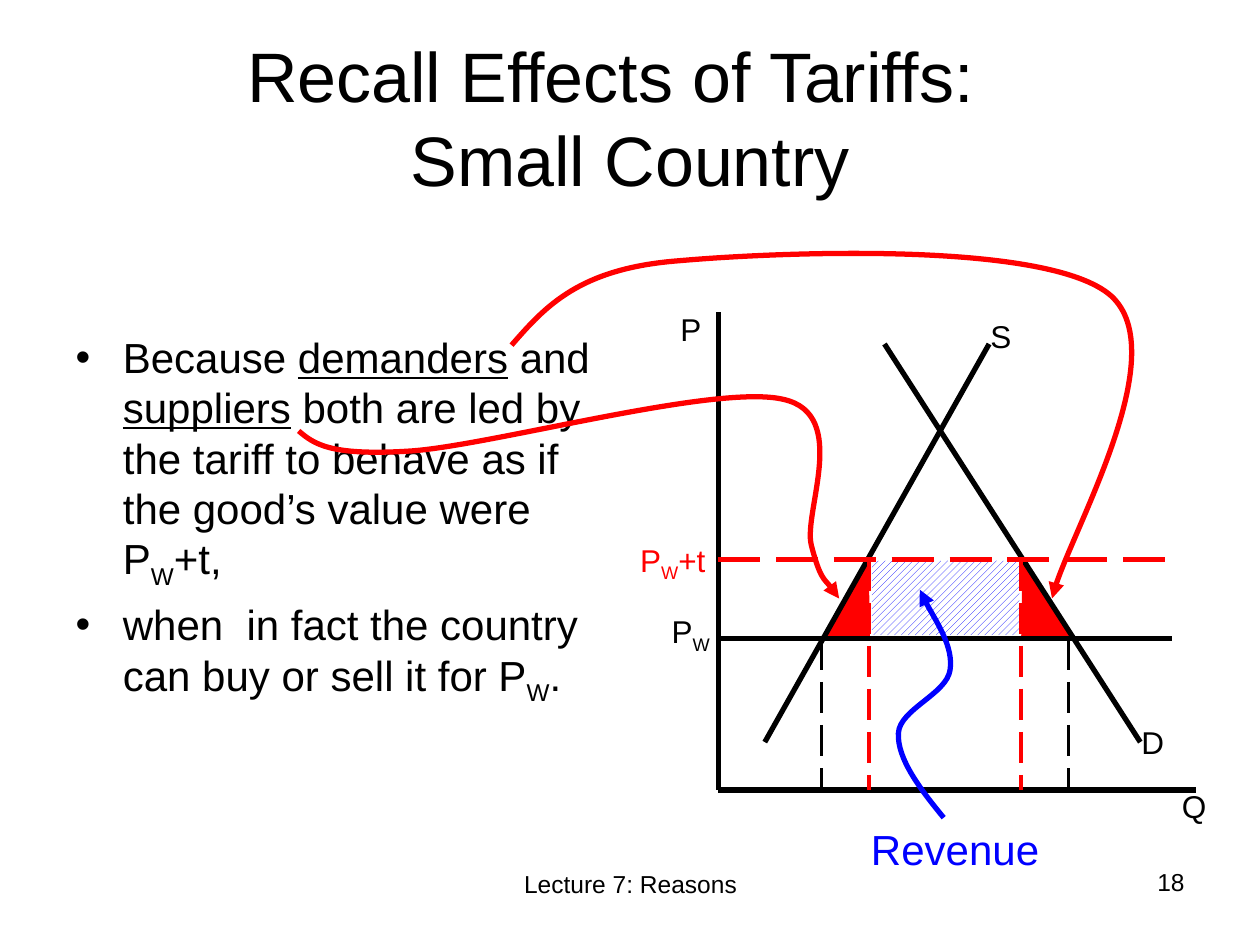
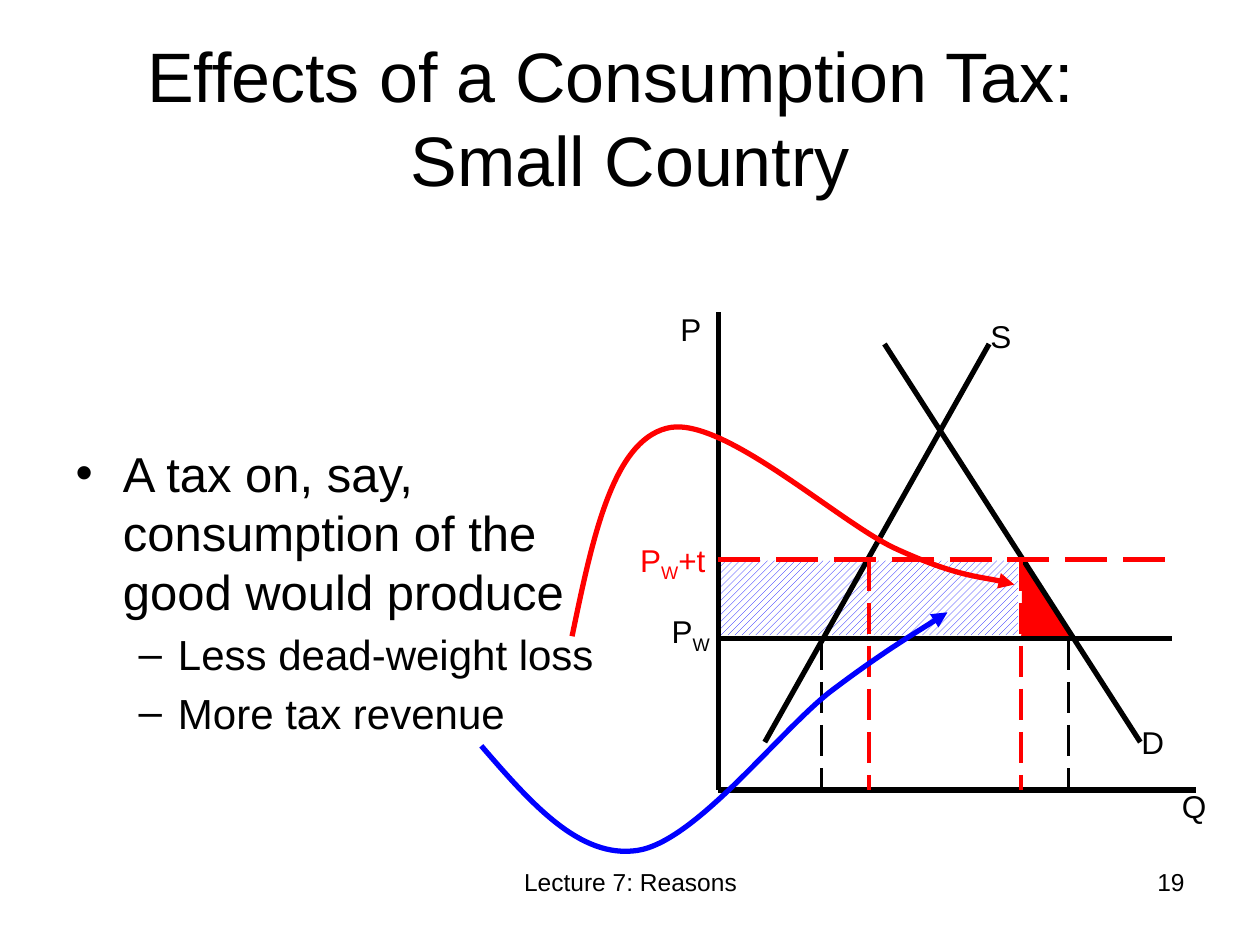
"""Build two slides on the effects of a tariff and a consumption tax."""
from lxml import etree
from pptx import Presentation
from pptx import util as u
from pptx.dml.color import RGBColor
from pptx.enum import dml, shapes, text
from pptx.oxml.ns import qn

BLACK = RGBColor(0, 0, 0)
WHITE = RGBColor(255, 255, 255)
RED = RGBColor(255, 0, 0)
BLUE = RGBColor(0, 0, 255)
FONT = "Arial"
LEFT, CENTER, RIGHT = (text.PP_ALIGN.LEFT, text.PP_ALIGN.CENTER, text.PP_ALIGN.RIGHT)
UNDERLINE = {"underline": True}
SUBSCRIPT = {"baseline": -25000}
WORLD_PRICE = [("P", {}), ("W", SUBSCRIPT)]
TARIFF_PRICE = WORLD_PRICE + [("+t", {})]

AXIS_X, AXIS_TOP, AXIS_Y, AXIS_RIGHT = 5.7, 2.48, 6.27, 9.49
WORLD_Y, TARIFF_Y, PRICE_RIGHT = 5.07, 4.44, 9.3
FREE_TRADE_X = (6.52, 8.48)
TARIFF_X = (6.9, 8.1)
SUPPLY_LOSS = [(6.89, 4.45), (6.9, 5.08), (6.53, 5.07)]
DEMAND_LOSS = [(8.12, 4.44), (8.11, 5.07), (8.52, 5.06)]


def place(shape, left, top, width, height):
    box = {"left": left, "top": top, "width": width, "height": height}
    for name, value in box.items():
        setattr(shape, name, u.Inches(value))


class Page:
    """Hold the shared style and draw elements on the current slide."""

    def __init__(self, deck):
        self.slide = deck.slides.add_slide(deck.slide_layouts[1])
        self.shapes = self.slide.shapes

    def add_spans(self, para, spans, size, color=BLACK):
        for words, extra in spans:
            span = para.add_run()
            span.text = words
            span.font.color.rgb = color
            style = {"name": FONT, "size": u.Pt(size), **extra}
            baseline = style.pop("baseline", None)
            for name, value in style.items():
                setattr(span.font, name, value)
            if baseline:
                span._r.get_or_add_rPr().set("baseline", str(baseline))

    def title(self, *lines):
        box = self.shapes.title
        place(box, 0.5, 0.3, 9, 1.25)
        para = box.text_frame.paragraphs[0]
        for number, line in enumerate(lines):
            if number:
                para.add_line_break()
                etree.SubElement(para._p[-1], qn("a:rPr"), sz="4000")
            self.add_spans(para, [(line, {})], 40)
        box.text_frame.auto_size = text.MSO_AUTO_SIZE.NONE

    def body(self, top, height, items):
        box = self.slide.placeholders[1]
        place(box, 0.5, top, 4.42, height)
        frame = box.text_frame
        frame.auto_size = text.MSO_AUTO_SIZE.NONE
        for number, (level, size, spans) in enumerate(items):
            para = frame.add_paragraph() if number else frame.paragraphs[0]
            para.level = level
            self.add_spans(para, spans, size)

    def text(self, left, top, width, height, spans, size, color=BLACK, align=LEFT, inset=(0.1, 0.05)):
        box = self.shapes.add_textbox(*map(u.Inches, (left, top, width, height)))
        frame = box.text_frame
        across, down = map(u.Inches, inset)
        layout = {"word_wrap": True, "margin_left": across, "margin_right": across,
                  "margin_top": down, "margin_bottom": down}
        for name, value in layout.items():
            setattr(frame, name, value)
        frame.paragraphs[0].alignment = align
        self.add_spans(frame.paragraphs[0], spans, size, color)

    def label(self, left, top, width, spans, color=BLACK):
        self.text(left, top, width, 0.36, spans, 18, color, inset=(0.08, 0.04))

    def footer(self, number, top=6.83):
        self.text(3.42, top, 3.17, 0.52, [("Lecture 7: Reasons", {})], 14, align=CENTER)
        self.text(7.17, 6.83, 2.33, 0.52, [(number, {})], 14, align=RIGHT)

    def line(self, start, end, color=BLACK, width=3.0, dashed=False):
        line = self.shapes.add_connector(
            shapes.MSO_CONNECTOR.STRAIGHT, *map(u.Inches, (*start, *end)))
        line.line.color.rgb = color
        line.line.width = u.Pt(width)
        if dashed:
            line.line.dash_style = dml.MSO_LINE.LONG_DASH
        etree.SubElement(line._element.spPr, qn("a:effectLst"))

    def outline(self, points, color, width, close):
        start, *rest = [tuple(map(u.Inches, point)) for point in points]
        builder = self.shapes.build_freeform(*start)
        builder.add_line_segments(rest, close=close)
        shape = builder.convert_to_shape()
        shape.shadow.inherit = False
        shape.line.color.rgb = color
        shape.line.width = u.Pt(width)
        return shape

    def area(self, points):
        shape = self.outline(points, RED, 0.75, True)
        shape.fill.solid()
        shape.fill.fore_color.rgb = RED

    def curve(self, points, color):
        """Draw an arrow through Bezier points: a start, then threes of two handles and an end."""
        shape = self.outline(points, color, 3, False)
        shape.fill.background()
        properties = shape._element.spPr
        steps = list(properties.iter(qn("a:lnTo")))
        for first in range(0, len(steps), 3):
            bend = etree.Element(qn("a:cubicBezTo"))
            steps[first].addprevious(bend)
            for step in steps[first:first + 3]:
                bend.append(step[0])
                step.getparent().remove(step)
        etree.SubElement(properties.find(qn("a:ln")), qn("a:tailEnd"), type="triangle")

    def revenue_area(self, left, width):
        shape = self.shapes.add_shape(
            shapes.MSO_SHAPE.RECTANGLE, *map(u.Inches, (left, 4.45, width, 0.59)))
        shape.shadow.inherit = False
        shape.fill.patterned()
        shape.fill.pattern = dml.MSO_PATTERN.WIDE_UPWARD_DIAGONAL
        shape.fill.fore_color.rgb = BLUE
        shape.fill.back_color.rgb = WHITE
        shape.line.fill.background()

    def market(self, losses):
        for loss in losses:
            self.area(loss)
        corner = (AXIS_X, AXIS_Y)
        for start, end in (
            ((AXIS_X, AXIS_TOP), corner),
            (corner, (AXIS_RIGHT, AXIS_Y)),
            ((7.85, 2.73), (6.07, 5.89)),
            ((7.02, 2.73), (9.05, 5.89)),
            ((AXIS_X, WORLD_Y), (PRICE_RIGHT, WORLD_Y)),
        ):
            self.line(start, end)
        for x in FREE_TRADE_X:
            self.line((x, WORLD_Y), (x, AXIS_Y), BLACK, 2.25, True)
        self.line((AXIS_X, TARIFF_Y), (PRICE_RIGHT, TARIFF_Y), RED, 3, True)
        for x in TARIFF_X:
            self.line((x, TARIFF_Y), (x, AXIS_Y), RED, 2.25, True)
        for letter, left, top in (("S", 7.78, 2.48), ("D", 8.98, 5.7),
                                  ("P", 5.32, 2.42), ("Q", 9.3, 6.21)):
            self.label(left, top, 0.44, [(letter, {})])
        self.label(5.25, 4.82, 0.51, WORLD_PRICE)
        self.label(5, 4.25, 0.82, TARIFF_PRICE, RED)


def tariff_slide(deck):
    page = Page(deck)
    page.title("Recall Effects of Tariffs:  ", "Small Country")
    page.body(2.58, 4, [
        (0, 24, [("Because ", {}), ("demanders", UNDERLINE), (" and ", {}),
                 ("suppliers", UNDERLINE),
                 (" both are led by the tariff to behave as if the good’s value were  ", {}),
                 *TARIFF_PRICE, (",", {})]),
        (0, 24, [("when  in fact the country can buy or sell it for ", {}),
                 *WORLD_PRICE, (".", {})]),
    ])
    page.footer("18", 6.85)
    page.revenue_area(6.92, 1.17)
    page.market([DEMAND_LOSS, SUPPLY_LOSS])
    page.curve([(4.06, 2.74), (4.33, 2.43), (4.6, 2.13), (5.39, 2.07),
                (6.18, 2), (8.33, 1.91), (8.82, 2.35),
                (9.31, 2.8), (8.43, 4.35), (8.35, 4.75)], RED)
    page.curve([(2.37, 3.42), (2.49, 3.52), (2.61, 3.62), (3.25, 3.58),
                (3.89, 3.54), (5.69, 3.04), (6.22, 3.17),
                (6.75, 3.29), (6.37, 4.07), (6.44, 4.33),
                (6.51, 4.6), (6.62, 4.68), (6.66, 4.75)], RED)
    page.text(6.11, 6.49, 2.94, 0.5, [("Revenue", {})], 24, BLUE, CENTER)
    page.curve([(7.49, 6.49), (7.3, 6.26), (7.12, 6.02), (7.13, 5.82),
                (7.14, 5.63), (7.51, 5.51), (7.54, 5.32),
                (7.57, 5.13), (7.34, 4.79), (7.3, 4.68)], BLUE)


def consumption_tax_slide(deck):
    page = Page(deck)
    page.title("Effects of a Consumption Tax:  ", "Small Country")
    page.body(3.47, 2.92, [
        (0, 28, [("A tax on, say, consumption of the good would produce", {})]),
        (1, 24, [("Less dead-weight loss", {})]),
        (1, 24, [("More tax revenue", {})]),
    ])
    page.footer("19")
    page.revenue_area(5.71, 2.37)
    page.market([DEMAND_LOSS])
    page.curve([(4.54, 5.05), (4.7, 4.28), (4.86, 3.51), (5.29, 3.4),
                (5.72, 3.28), (6.67, 4.16), (7.12, 4.36),
                (7.58, 4.57), (7.89, 4.59), (8.05, 4.64)], RED)
    page.curve([(3.82, 5.92), (4.21, 6.37), (4.6, 6.82), (5.06, 6.75),
                (5.52, 6.68), (6.18, 5.81), (6.59, 5.49),
                (7, 5.18), (7.37, 4.96), (7.52, 4.86)], BLUE)


def main():
    deck = Presentation()
    deck.slide_width, deck.slide_height = u.Inches(10), u.Inches(7.5)
    tariff_slide(deck)
    consumption_tax_slide(deck)
    deck.save("out.pptx")


if __name__ == "__main__":
    main()
